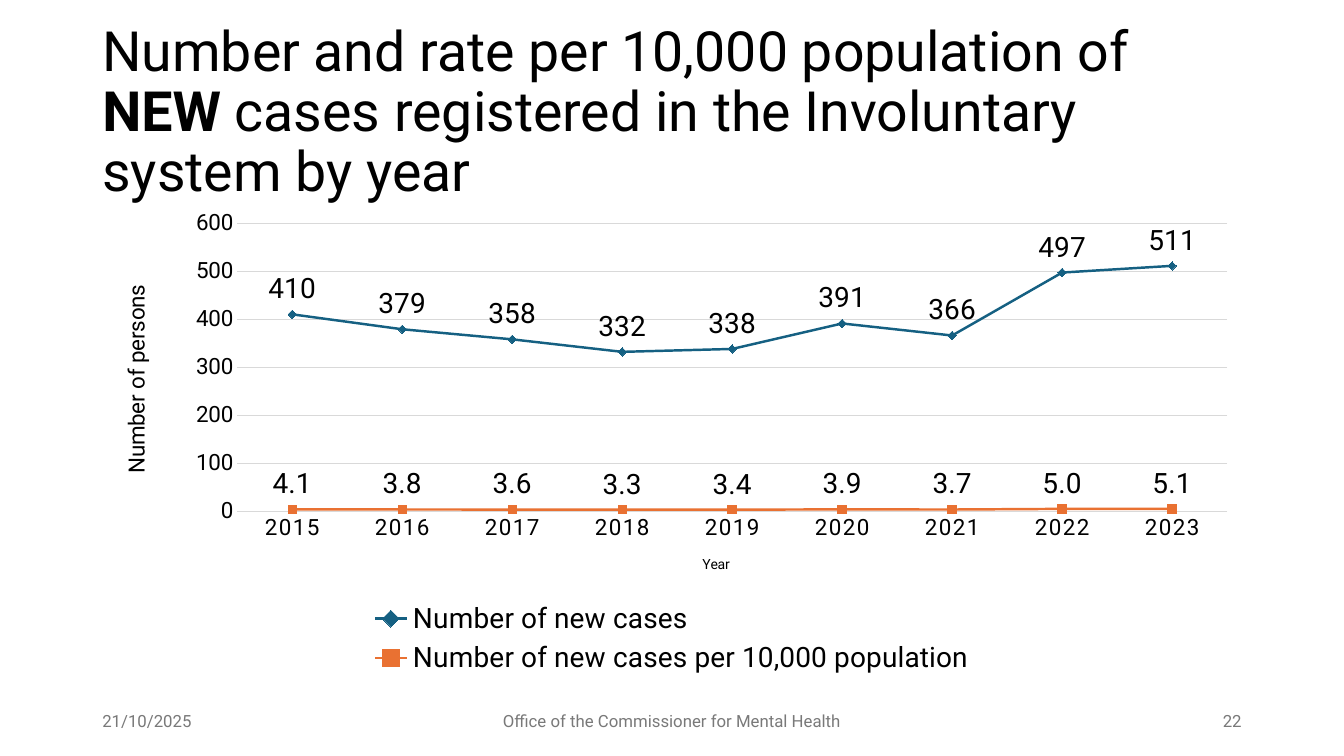
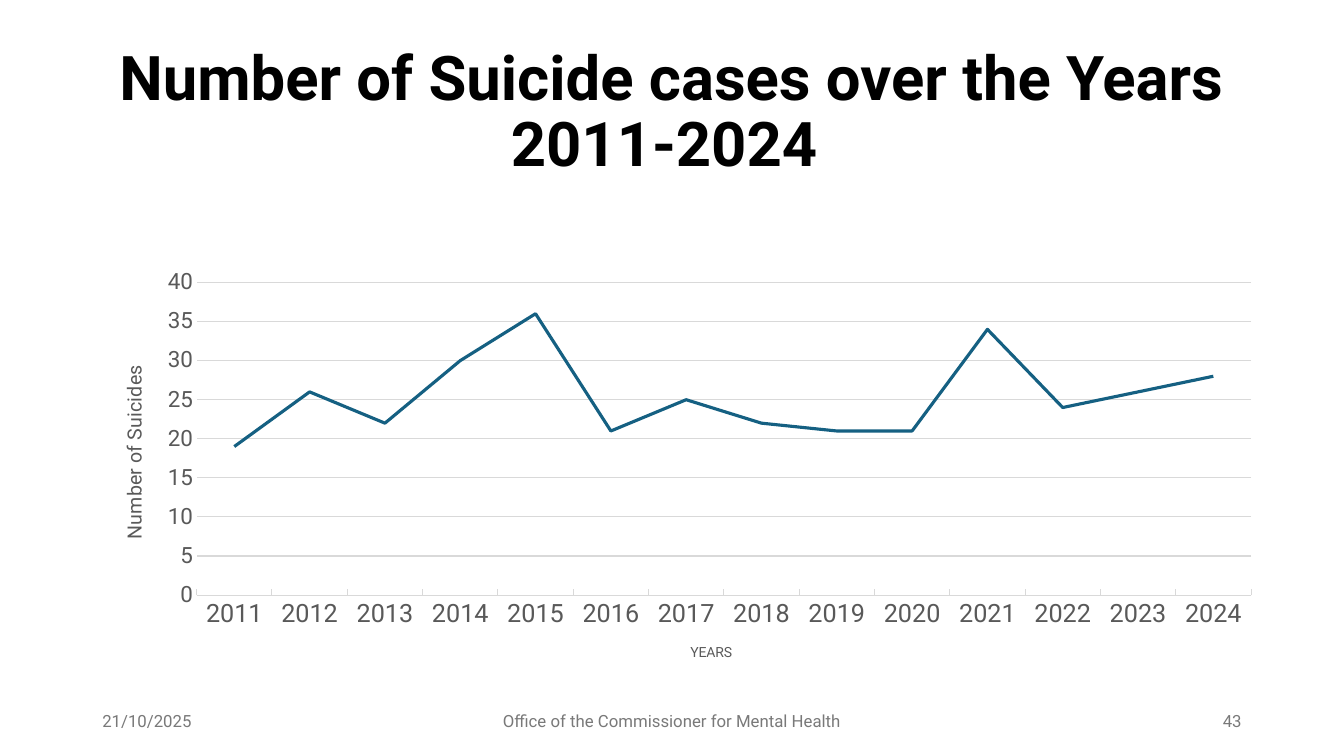
"""Build two slides with line charts on mental health figures by year."""
from dataclasses import dataclass

from lxml.etree import SubElement
from pptx import Presentation
from pptx.chart.data import CategoryChartData
from pptx.dml.color import RGBColor
from pptx.enum.chart import XL_CHART_TYPE as ChartKind
from pptx.enum.chart import XL_LABEL_POSITION as LabelPosition
from pptx.enum.chart import XL_LEGEND_POSITION as LegendPosition
from pptx.enum.chart import XL_MARKER_STYLE as Marker
from pptx.enum.chart import XL_TICK_MARK as Tick
from pptx.enum.text import MSO_ANCHOR as Anchor
from pptx.enum.text import PP_ALIGN as Align
from pptx.oxml.ns import qn
from pptx.util import Emu, Inches, Pt


@dataclass(frozen=True)
class Theme:
    font: str = "Roboto"
    ink: str = "000000"
    soft: str = "595959"
    muted: str = "797979"
    rule: str = "D9D9D9"
    blue: str = "156082"
    orange: str = "E97132"
    rule_width: float = 0.75
    base: float = 10
    footer: float = 12
    axis: float = 16
    label: float = 20
    marker: int = 6


@dataclass(frozen=True)
class Area:
    column: int
    row: int
    columns: int
    rows: int


@dataclass(frozen=True)
class Span:
    text: str
    bold: bool = False


@dataclass(frozen=True)
class Series:
    name: str
    values: tuple
    color: str
    line: float
    marker: Marker | None = None
    label_format: str = ""


@dataclass(frozen=True)
class Axis:
    title: str
    title_size: float
    title_spot: tuple
    label_size: float
    tick: Tick = Tick.NONE
    spacing: int = 0
    turn: int = 0


@dataclass(frozen=True)
class ChartSlide:
    number: int
    title: tuple
    title_size: float
    title_align: Align
    kind: ChartKind
    color: str
    plot: tuple
    first_year: int
    series: tuple
    category: Axis
    value: Axis
    top: int
    step: int
    legend: bool = False


THEME = Theme()
WIDTH, HEIGHT = Inches(40 / 3), Inches(7.5)
COLUMN, ROW = WIDTH // 160, HEIGHT // 150
TITLE = Area(11, 8, 138, 29)
CHART = Area(11, 40, 138, 95)
FOOTER_ROW, FOOTER_ROWS = 139, 8
DATE = "21/10/2025"
OFFICE = "Office of the Commissioner for Mental Health"

SLIDES = (
    ChartSlide(
        number=22,
        title=(Span("Number and rate per 10,000 population of "), Span("NEW", True),
               Span(" cases registered in the Involuntary system by year")),
        title_size=39.6,
        title_align=Align.LEFT,
        kind=ChartKind.LINE_MARKERS,
        color=THEME.ink,
        plot=(12.5, 4.5, 85.4, 60.2),
        first_year=2015,
        series=(
            Series("Number of new cases", (410, 379, 358, 332, 338, 391, 366, 497, 511),
                   THEME.blue, 1.75, Marker.DIAMOND, "0"),
            Series("Number of new cases per 10,000 population",
                   (4.1, 3.8, 3.6, 3.3, 3.4, 3.9, 3.7, 5.0, 5.1),
                   THEME.orange, 1.75, Marker.SQUARE, "0.0"),
        ),
        category=Axis("Year", THEME.base, (52.4, 73.4), THEME.axis, spacing=120),
        value=Axis("Number of persons", 16, (2.2, 16.5), THEME.axis, turn=-90),
        top=600,
        step=100,
        legend=True,
    ),
    ChartSlide(
        number=43,
        title=(Span("Number of Suicide cases over the Years 2011-2024 ", True),),
        title_size=44,
        title_align=Align.CENTER,
        kind=ChartKind.LINE,
        color=THEME.soft,
        plot=(9, 16.9, 91, 65.3),
        first_year=2011,
        series=(
            Series("Series 1", (19, 26, 22, 30, 36, 21, 25, 22, 21, 21, 34, 24, 26, 28),
                   THEME.blue, 2.25),
        ),
        category=Axis("YEARS", THEME.base, (51.4, 91.8), 18, Tick.INSIDE),
        value=Axis("Number of Suicides", 14, (2.1, 33.4), THEME.axis, turn=-90),
        top=40,
        step=5,
    ),
)


def place(area: Area) -> tuple[Emu, Emu, Emu, Emu]:
    """Turn grid cells into slide lengths."""
    return (Emu(area.column * COLUMN), Emu(area.row * ROW),
            Emu(area.columns * COLUMN), Emu(area.rows * ROW))


def style_font(font, size: float, color: str, bold: bool = False) -> None:
    """Apply the theme typeface with a size, colour and weight."""
    font.name = THEME.font
    font.size = Pt(size)
    font.bold = bold
    font.color.rgb = RGBColor.from_string(color)


def style_line(line, color: str, width: float) -> None:
    """Give a line its colour and width."""
    line.color.rgb = RGBColor.from_string(color)
    line.width = Pt(width)


def add_text(page, area: Area, spans: tuple, size: float, color: str,
             align: Align, line_spacing: float = 1.0) -> None:
    """Add a vertically centred text box made of spans."""
    frame = page.shapes.add_textbox(*place(area)).text_frame
    frame.word_wrap = True
    frame.vertical_anchor = Anchor.MIDDLE
    para = frame.paragraphs[0]
    para.alignment = align
    para.line_spacing = line_spacing
    for span in spans:
        run = para.add_run()
        run.text = span.text
        style_font(run.font, size, color, span.bold)


def set_layout(parent, index: int, shares: tuple, inner: bool = False) -> None:
    """Fix a chart part at percentages of the chart area."""
    for old in parent.findall(qn("c:layout")):
        parent.remove(old)
    layout = SubElement(parent, qn("c:layout"))
    parent.insert(index, layout)
    manual = SubElement(layout, qn("c:manualLayout"))
    settings = [("layoutTarget", "inner")] if inner else []
    settings += [("xMode", "edge"), ("yMode", "edge")]
    settings += [(name, str(share / 100)) for name, share in zip("xywh", shares)]
    for name, setting in settings:
        SubElement(manual, qn(f"c:{name}")).set("val", setting)


def style_axis(axis, design: Axis, color: str) -> None:
    """Set the title, tick marks and labels of an axis."""
    axis.major_tick_mark = design.tick
    axis.minor_tick_mark = Tick.NONE
    style_font(axis.tick_labels.font, design.label_size, color)
    title = axis.axis_title
    title.text_frame.text = design.title
    style_font(title.text_frame.paragraphs[0].runs[0].font, design.title_size, color)
    body = title.element.find(f".//{qn('a:bodyPr')}")
    body.set("rot", str(design.turn * 60000))
    body.set("vert", "horz")
    set_layout(title.element, 1, design.title_spot)


def style_series(line_series, design: Series) -> None:
    """Set the line, markers and value labels of a series."""
    line_series.smooth = False
    style_line(line_series.format.line, design.color, design.line)
    if design.marker is None:
        return
    marker = line_series.marker
    marker.style = design.marker
    marker.size = THEME.marker
    marker.format.fill.solid()
    marker.format.fill.fore_color.rgb = RGBColor.from_string(design.color)
    style_line(marker.format.line, design.color, THEME.rule_width)
    labels = line_series.data_labels
    labels.show_value = True
    labels.position = LabelPosition.ABOVE
    labels.number_format = design.label_format
    labels.number_format_is_linked = False
    style_font(labels.font, THEME.label, THEME.ink)


def add_line_chart(page, design: ChartSlide) -> None:
    """Add the line chart of a slide."""
    data = CategoryChartData()
    count = len(design.series[0].values)
    data.categories = [str(design.first_year + step) for step in range(count)]
    for series in design.series:
        data.add_series(series.name, series.values)
    chart = page.shapes.add_chart(design.kind, *place(CHART), data).chart
    style_font(chart.font, THEME.base, THEME.ink)
    chart.has_title = False
    chart.plots[0].vary_by_categories = False
    for line_series, series in zip(chart.plots[0].series, design.series):
        style_series(line_series, series)

    style_axis(chart.category_axis, design.category, design.color)
    style_line(chart.category_axis.format.line, THEME.rule, THEME.rule_width)
    if design.category.spacing:
        labels = f".//{qn('c:catAx')}/{qn('c:txPr')}//{qn('a:defRPr')}"
        chart.element.find(labels).set("spc", str(design.category.spacing))

    value_axis = chart.value_axis
    style_axis(value_axis, design.value, design.color)
    value_axis.minimum_scale, value_axis.maximum_scale = 0, design.top
    value_axis.major_unit = design.step
    value_axis.format.line.fill.background()
    value_axis.has_major_gridlines = True
    style_line(value_axis.major_gridlines.format.line, THEME.rule, THEME.rule_width)

    chart.has_legend = design.legend
    if design.legend:
        chart.legend.position = LegendPosition.BOTTOM
        chart.legend.include_in_layout = False
        style_font(chart.legend.font, THEME.label, THEME.ink)
    plot_area = chart.element.find(f".//{qn('c:plotArea')}")
    set_layout(plot_area, 0, design.plot, inner=True)


def add_footer(page, number: int) -> None:
    """Add the date, office name and slide number."""
    for text, column, columns, align in (
        (DATE, 11, 36, Align.LEFT),
        (OFFICE, 53, 54, Align.CENTER),
        (str(number), 113, 36, Align.RIGHT),
    ):
        area = Area(column, FOOTER_ROW, columns, FOOTER_ROWS)
        add_text(page, area, (Span(text),), THEME.footer, THEME.muted, align)


def main() -> None:
    """Build and save the deck."""
    deck = Presentation()
    deck.slide_width, deck.slide_height = WIDTH, HEIGHT
    for design in SLIDES:
        page = deck.slides.add_slide(deck.slide_layouts[6])
        add_text(page, TITLE, design.title, design.title_size, THEME.ink,
                 design.title_align, 0.9)
        add_line_chart(page, design)
        add_footer(page, design.number)
    deck.save("out.pptx")


if __name__ == "__main__":
    main()
